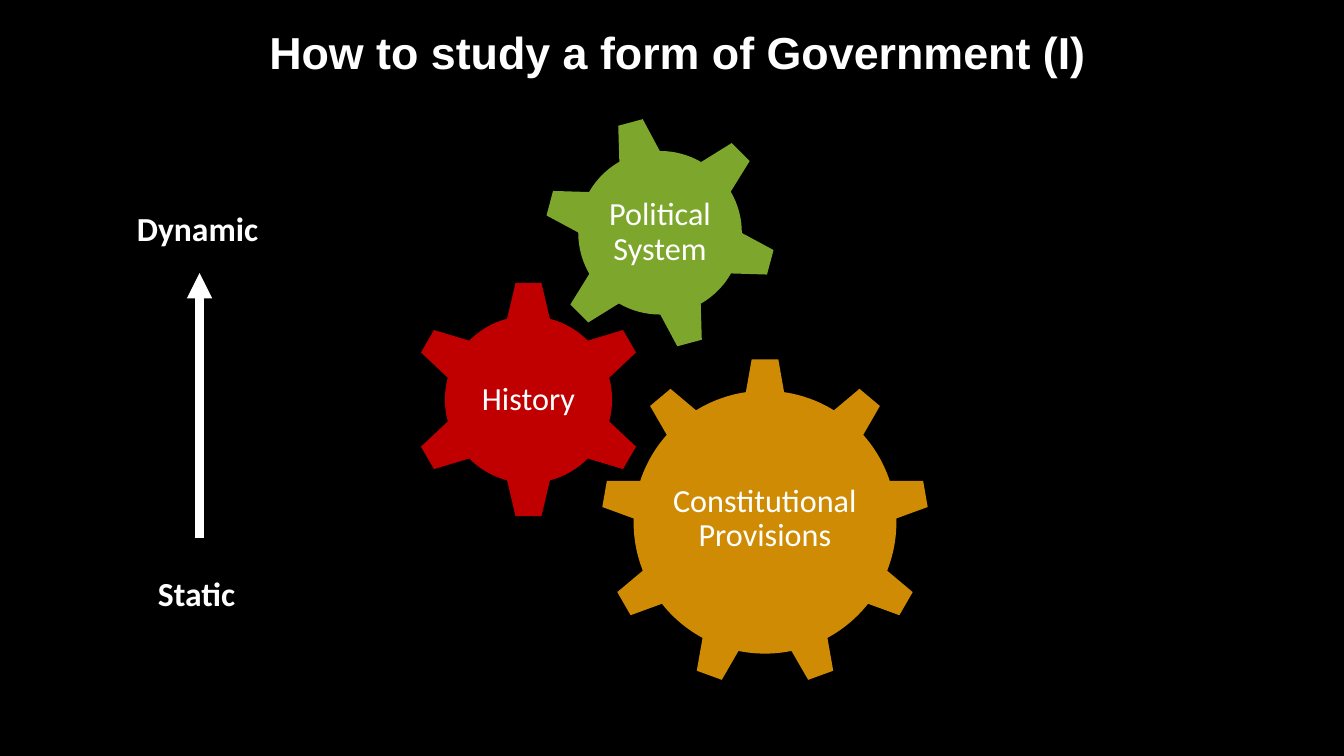
from pptx import Presentation
from pptx.dml.color import RGBColor
from pptx.enum.shapes import MSO_CONNECTOR, MSO_SHAPE
from pptx.enum.text import MSO_ANCHOR, MSO_AUTO_SIZE, PP_ALIGN
from pptx.oxml.ns import qn
from pptx.util import Cm, Pt
from lxml import etree

STRAIGHT = MSO_CONNECTOR.STRAIGHT
GEAR_6, GEAR_9 = MSO_SHAPE.GEAR_6, MSO_SHAPE.GEAR_9
TOP, MIDDLE = MSO_ANCHOR.TOP, MSO_ANCHOR.MIDDLE
LEFT, CENTER = PP_ALIGN.LEFT, PP_ALIGN.CENTER
GROW, FIXED = MSO_AUTO_SIZE.SHAPE_TO_FIT_TEXT, MSO_AUTO_SIZE.NONE


def color(value):
    return RGBColor.from_string(value)


def write(box, text, font="Calibri", size=24, bold=False, ink="FFFFFF",
          align=LEFT, line_spacing=None):
    para = box.text_frame.paragraphs[0]
    para.alignment = align
    para.line_spacing = line_spacing
    span = para.add_run()
    span.text = text
    span.font.name = font
    span.font.size = Pt(size)
    span.font.bold = bold
    span.font.color.rgb = color(ink)


class SlidePainter:
    """Draws elements on one page; all lengths are in centimetres."""

    ink = "FFFFFF"
    background = "000000"

    def __init__(self, page):
        self.page = page
        page.background.fill.solid()
        page.background.fill.fore_color.rgb = color(self.background)

    def text(self, text, left, top, width, height, wrap=True, anchor=TOP,
             inset=None, fit=GROW, **style):
        box = self.page.shapes.add_textbox(Cm(left), Cm(top), Cm(width), Cm(height))
        frame = box.text_frame
        frame.word_wrap = wrap
        frame.auto_size = fit
        frame.vertical_anchor = anchor
        if inset is not None:
            frame.margin_left = frame.margin_right = Cm(inset)
            frame.margin_top = frame.margin_bottom = Cm(inset)
        write(box, text, ink=self.ink, **style)

    def gear(self, kind, label, left, top, size, fill, label_size,
             rotation=0, lift=0):
        wheel = self.page.shapes.add_shape(kind, Cm(left), Cm(top), Cm(size), Cm(size))
        wheel.shadow.inherit = False
        wheel.rotation = rotation
        wheel.fill.solid()
        wheel.fill.fore_color.rgb = color(fill)
        wheel.line.fill.background()
        # The label stays upright and is centred on the wheel
        margin = (size - label_size) / 2
        self.text(label, left + margin, top + margin - lift, label_size, label_size,
                  anchor=MIDDLE, inset=0.08, fit=FIXED, size=23, align=CENTER,
                  line_spacing=0.9)

    def arrow(self, x, start, end, weight):
        line = self.page.shapes.add_connector(STRAIGHT, Cm(x), Cm(start), Cm(x), Cm(end))
        line.line.color.rgb = color(self.ink)
        line.line.width = Pt(weight)
        etree.SubElement(line.line._get_or_add_ln(), qn("a:tailEnd"), type="triangle")
        etree.SubElement(line._element.spPr, qn("a:effectLst"))


def main():
    deck = Presentation()
    deck.slide_width, deck.slide_height = Cm(33.87), Cm(19.05)
    painter = SlidePainter(deck.slides.add_slide(deck.slide_layouts[6]))

    # Title
    painter.text("How to study a form of Government (I)", 3.05, 0.51, 28.07, 1.63,
                 font="Arial", size=32, bold=True, align=CENTER)

    # Interlocking gears
    painter.gear(GEAR_9, "Constitutional Provisions", 15.14, 9.02, 8.28, "CF8B03",
                 4.95, lift=0.08)
    painter.gear(GEAR_6, "History", 10.31, 7.06, 6.02, "C00000", 3)
    painter.gear(GEAR_6, "Political System", 13.69, 2.92, 5.89, "7DA62C", 3.3,
                 rotation=345)

    # Scale from static to dynamic
    painter.text("Static", 3.73, 14.3, 2.69, 1.27, wrap=False, bold=True)
    painter.text("Dynamic", 3.2, 5.11, 3.78, 1.27, wrap=False, bold=True)
    painter.arrow(5.03, 13.56, 6.88, 6)

    deck.save("out.pptx")


if __name__ == "__main__":
    main()
